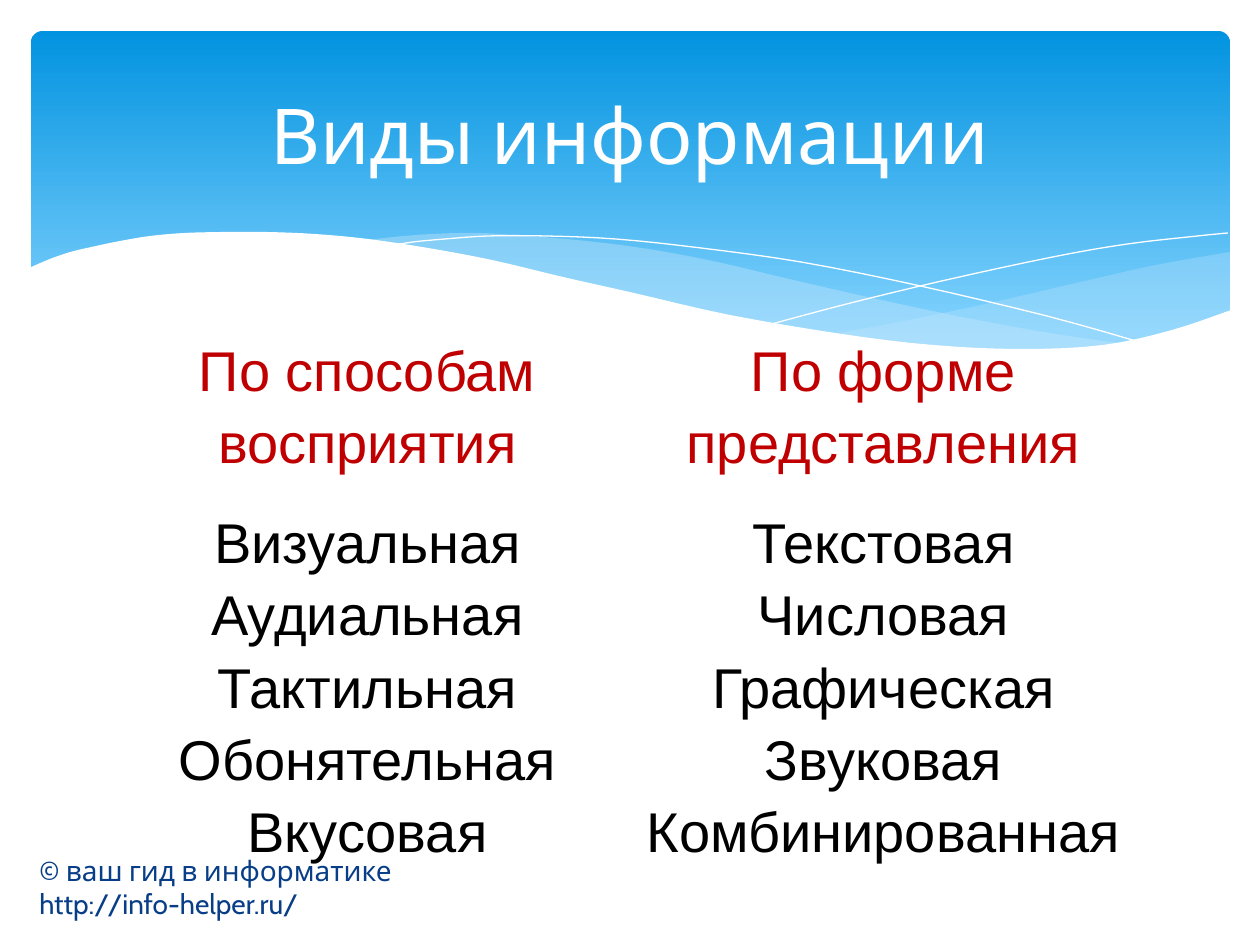
"""Build a slide on the kinds of information: wave header, table, footer."""
from lxml import etree
from pptx import Presentation
from pptx import util as u
from pptx.dml.color import RGBColor
from pptx.enum import shapes, text
from pptx.oxml.ns import qn

PX = 914400 / 126
HUES = {"white": "FFFFFF", "deep": "0293E0", "sky": "83D3FE", "veil": "C6E7FC",
        "red": "C00000", "black": "000000", "navy": "073E87"}
TITLE = "Виды информации"
FOOT = "© ваш гид в информатике http://info-helper.ru/"
HEADS = ["По способам восприятия", "По форме представления"]
KINDS = [
    ["Визуальная", "Аудиальная", "Тактильная", "Обонятельная", "Вкусовая"],
    ["Текстовая", "Числовая", "Графическая", "Звуковая", "Комбинированная"],
]
COLS, ROWS = [469, 563], [98, 168, 389]
NO_GRID = "{2D5ABB26-0587-4C30-8999-92F81FD0307C}"

RIGHT = [
    [(1230, 252), (1156, 265), (1085, 281), (981, 305), (889, 324), (833, 334)],
    [(833, 334), (906, 343), (967, 348), (1026, 350), (1076, 348), (1120, 343),
     (1160, 334), (1196, 324), (1230, 311)],
]
WIDE = [
    [(1125, 344), (1055, 334), (977, 320), (890, 302), (793, 280), (717, 262),
     (648, 249), (586, 241), (529, 236), (479, 233), (433, 234), (394, 237), (360, 241)],
    [(360, 241), (431, 251), (509, 266), (566, 279), (668, 302), (757, 321), (838, 335),
     (910, 345), (974, 349), (1030, 350), (1080, 349), (1125, 344)],
]
FALL = [[(389, 246), (413, 242), (445, 239), (488, 236), (546, 236), (616, 239),
         (701, 248), (801, 262), (916, 285), (1047, 316), (1143, 343)]]
RISE = [[(772, 324), (847, 304), (942, 281), (1053, 257), (1128, 244), (1198, 236),
         (1228, 233)]]
FRONT = [
    [(1231, 310), (1172, 330), (1103, 345), (1021, 349), (933, 345), (842, 334),
     (730, 315), (634, 293), (563, 277), (492, 260), (428, 248), (368, 239), (315, 234),
     (266, 232), (223, 232), (184, 233), (150, 236), (120, 241), (96, 246), (74, 251),
     (58, 256), (45, 261), (29, 268)],
    [(29, 415), (1231, 415)],
]
WAVES = [
    dict(arcs=RIGHT, fill="veil", alpha=29),
    dict(arcs=WIDE, fill="veil", alpha=40),
    dict(arcs=FALL, line="white"),
    dict(arcs=RISE, line="white"),
    dict(arcs=FRONT, fill="white"),
]


def emu(px):
    return u.Emu(round(px * PX))


def rgb(name):
    return RGBColor.from_string(HUES[name])


def smooth(pts, steps=4):
    """Run a Catmull-Rom curve through the points."""
    if len(pts) < 3:
        return pts
    ends = [pts[0], *pts, pts[-1]]
    out = []
    for quad in zip(ends, ends[1:], ends[2:], ends[3:]):
        for t in (k / steps for k in range(steps)):
            out.append(tuple(
                b + t * (c - a) / 2 + t * t * (2 * a - 5 * b + 4 * c - d) / 2
                + t ** 3 * (3 * b - a - 3 * c + d) / 2
                for a, b, c, d in zip(*quad)))
    return out + [pts[-1]]


def wave(tree, arcs, fill=None, line=None, alpha=100):
    pts = [(emu(x), emu(y)) for arc in arcs for x, y in smooth(arc)]
    form = tree.build_freeform(*pts[0], scale=1.0)
    form.add_line_segments(pts[1:], close=bool(fill))
    shape = form.convert_to_shape()
    shape.shadow.inherit = False
    if fill:
        shape.fill.solid()
        shape.fill.fore_color.rgb = rgb(fill)
        shape.line.fill.background()
        if alpha < 100:
            tint = next(shape.fill._xPr.iter(qn("a:srgbClr")))
            etree.SubElement(tint, qn("a:alpha"), val=str(alpha * 1000))
    else:
        shape.fill.background()
        shape.line.color.rgb = rgb(line)
        shape.line.width = u.Pt(0)


def write(frame, words, size, hue, font="Cabin", align=text.PP_ALIGN.CENTER,
          lead=None, after=None):
    para = frame.paragraphs[0]
    para.text = words
    para.alignment = align
    if lead:
        para.line_spacing = lead
    if after:
        para.space_after = u.Pt(after)
    for run in para.runs:
        run.font.size = u.Pt(size)
        run.font.name = font
        run.font.color.rgb = rgb(hue)


def label(tree, box, words, **look):
    frame = tree.add_textbox(*map(emu, box)).text_frame
    frame.word_wrap = True
    frame.vertical_anchor = text.MSO_ANCHOR.MIDDLE
    write(frame, words, **look)


def banner(tree):
    shape = tree.add_shape(shapes.MSO_SHAPE.ROUNDED_RECTANGLE,
                           *map(emu, (31, 31, 1199, 340)))
    shape.shadow.inherit = False
    shape.adjustments[0] = 0.034
    shape.line.fill.background()
    shape.fill.gradient()
    shape.fill.gradient_angle = 270
    for stop, spot, hue in zip(shape.fill.gradient_stops, (0, 0.9), ("deep", "sky")):
        stop.position = spot
        stop.color.rgb = rgb(hue)


def grid(tree):
    frame = tree.add_table(len(ROWS), len(COLS),
                           *map(emu, (133, 224, sum(COLS), sum(ROWS))))
    table = frame.table
    table.first_row = table.horz_banding = False
    next(table._tbl.iter(qn("a:tableStyleId"))).text = NO_GRID
    for col, wide in zip(table.columns, COLS):
        col.width = emu(wide)
    for row, high in zip(table.rows, ROWS):
        row.height = emu(high)
    for cell in table.iter_cells():
        cell.fill.background()
        cell.margin_left = cell.margin_right = emu(9)
        cell.margin_top = cell.margin_bottom = emu(9)
    table.cell(0, 0).merge(table.cell(0, 1))
    look = dict(size=32, font="Arial", lead=1.15)
    for i, (head, kinds) in enumerate(zip(HEADS, KINDS)):
        write(table.cell(1, i).text_frame, head, hue="red", after=10, **look)
        write(table.cell(2, i).text_frame, "\v".join(kinds), hue="black", **look)


def main():
    deck = Presentation()
    deck.slide_width, deck.slide_height = emu(1260), emu(945)
    tree = deck.slides.add_slide(deck.slide_layouts[6]).shapes
    banner(tree)
    for item in WAVES:
        wave(tree, **item)
    label(tree, (63, 47, 1134, 173), TITLE, size=44, hue="white")
    grid(tree)
    label(tree, (27, 862, 522, 50), FOOT, size=16, hue="navy",
          align=text.PP_ALIGN.LEFT)
    deck.save("out.pptx")


if __name__ == "__main__":
    main()
